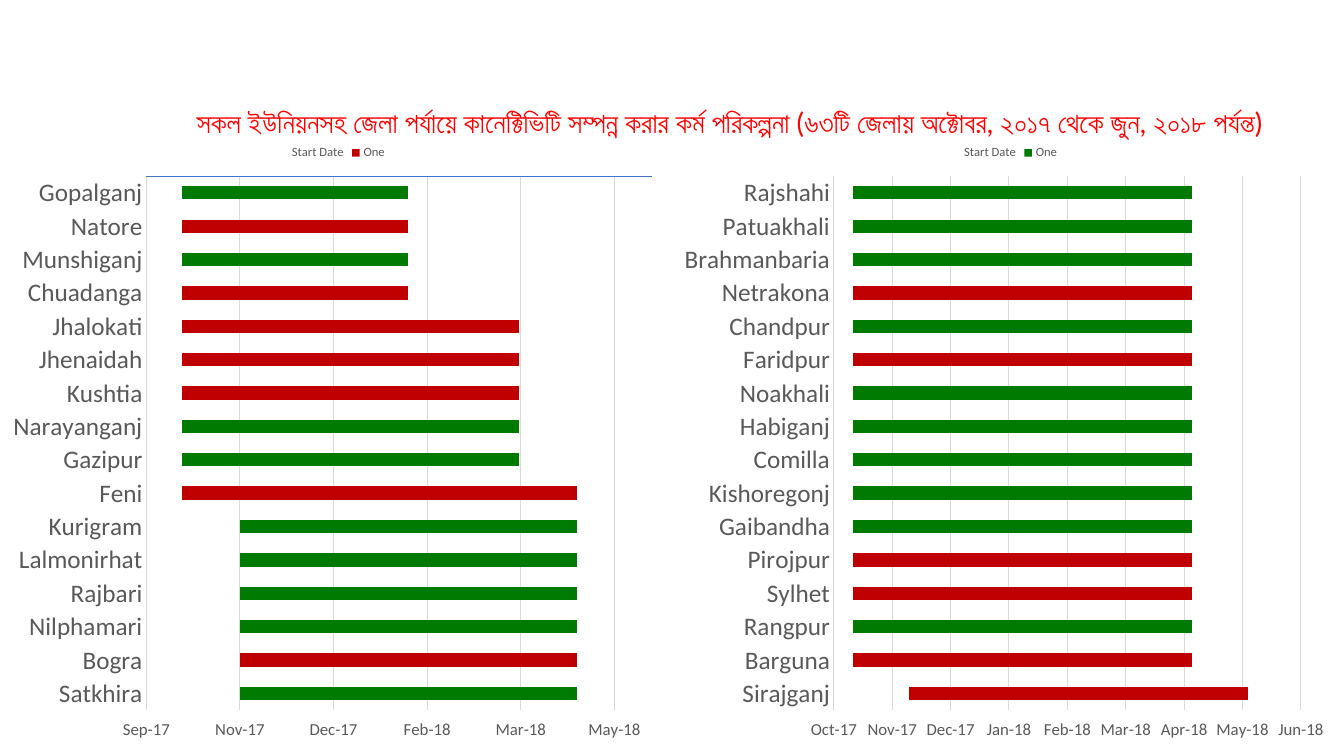
from lxml import etree
from pptx import Presentation
from pptx.chart.data import CategoryChartData
from pptx.dml.color import RGBColor
from pptx.enum.chart import XL_CHART_TYPE, XL_LEGEND_POSITION, XL_TICK_LABEL_POSITION, XL_TICK_MARK
from pptx.enum.text import MSO_ANCHOR, MSO_AUTO_SIZE, PP_ALIGN
from pptx.oxml.ns import qn
from pptx.util import Pt

RED = RGBColor(0xFF, 0x00, 0x00)
DARK_RED = RGBColor(0xC0, 0x00, 0x00)
GREEN = RGBColor(0x00, 0x7A, 0x00)
BLUE = RGBColor(0x44, 0x72, 0xC4)
GRAY = RGBColor(0x59, 0x59, 0x59)
LIGHT = RGBColor(0xD9, 0xD9, 0xD9)


def set_font(font, text_size, color, name="Calibri"):
    font.size, font.name, font.bold = Pt(text_size), name, False
    font.color.rgb = color


def set_line(line, color):
    line.width = Pt(0.75)
    line.color.rgb = color


prs = Presentation()
prs.slide_width, prs.slide_height = Pt(960), Pt(540)
s = prs.slides.add_slide(prs.slide_layouts[5])

# Title
sp = s.shapes.title
sp.left, sp.top, sp.width, sp.height = Pt(133.2), Pt(71.3), Pt(810.7), Pt(31.7)
tf = sp.text_frame
tf.auto_size, tf.vertical_anchor = MSO_AUTO_SIZE.NONE, MSO_ANCHOR.MIDDLE
p = tf.paragraphs[0]
p.alignment = PP_ALIGN.LEFT
r = p.add_run()
r.text = "সকল ইউনিয়নসহ জেলা পর্যায়ে কানেক্টিভিটি সম্পন্ন করার কর্ম পরিকল্পনা (৬৩টি জেলায় অক্টোবর, ২০১৭ থেকে জুন, ২০১৮ পর্যন্ত)"
set_font(r.font, 20, RED, "Lato")

# District plans: (district, start day, days, team that carries the bar)
left_plan = [
    ("Gopalganj", 43009, 121, "Two"), ("Natore", 43009, 121, "One"),
    ("Munshiganj", 43009, 121, "Two"), ("Chuadanga", 43009, 121, "One"),
    ("Jhalokati", 43009, 180, "One"), ("Jhenaidah", 43009, 180, "One"),
    ("Kushtia", 43009, 180, "One"), ("Narayanganj", 43009, 180, "Two"),
    ("Gazipur", 43009, 180, "Two"), ("Feni", 43009, 211, "One"),
    ("Kurigram", 43040, 180, "Two"), ("Lalmonirhat", 43040, 180, "Two"),
    ("Rajbari", 43040, 180, "Two"), ("Nilphamari", 43040, 180, "Two"),
    ("Bogra", 43040, 180, "One"), ("Satkhira", 43040, 180, "Two"),
]
right_plan = [
    ("Rajshahi", 43040, 180, "One"), ("Patuakhali", 43040, 180, "One"),
    ("Brahmanbaria", 43040, 180, "One"), ("Netrakona", 43040, 180, "Two"),
    ("Chandpur", 43040, 180, "One"), ("Faridpur", 43040, 180, "Two"),
    ("Noakhali", 43040, 180, "One"), ("Habiganj", 43040, 180, "One"),
    ("Comilla", 43040, 180, "One"), ("Kishoregonj", 43040, 180, "One"),
    ("Gaibandha", 43040, 180, "One"), ("Pirojpur", 43040, 180, "Two"),
    ("Sylhet", 43040, 180, "Two"), ("Rangpur", 43040, 180, "One"),
    ("Barguna", 43040, 180, "Two"), ("Sirajganj", 43070, 180, "Two"),
]

# Charts: left edge, plan, team colours, axis (min, max, step), axis line, plot x and width in percent
charts = [
    (0, left_plan, (DARK_RED, GREEN), (42990, 43260, 50), BLUE, 22, 76),
    (480.2, right_plan, (GREEN, DARK_RED), (43030, 43278, 31), None, 24.3, 70.2),
]
for left, plan, colors, (low, high, step), axis_color, plot_x, plot_w in charts:
    data = CategoryChartData()
    data.categories = [district for district, *_ in plan]
    data.add_series("Start Date", [start for _, start, *_ in plan])
    for team in ("One", "Two"):
        data.add_series(team, [days if owner == team else 0 for *_, days, owner in plan])
    chart = s.shapes.add_chart(XL_CHART_TYPE.BAR_STACKED, Pt(left), Pt(95.8),
                               Pt(475.2), Pt(442), data).chart
    chart.has_title = False
    chart.font.size, chart.font.name = Pt(10), "Calibri"

    # Bars: the start date is an invisible offset
    plot = chart.plots[0]
    plot.gap_width, plot.overlap, plot.vary_by_categories = 150, 100, False
    offset, *bars = plot.series
    offset.format.fill.background()
    for bar, color in zip(bars, colors):
        bar.format.fill.solid()
        bar.format.fill.fore_color.rgb = color

    # Axes
    districts, dates = chart.category_axis, chart.value_axis
    districts.reverse_order = True
    for axis, text_size in ((districts, 18), (dates, 12)):
        axis.major_tick_mark = axis.minor_tick_mark = XL_TICK_MARK.NONE
        set_font(axis.tick_labels.font, text_size, GRAY)
    set_line(districts.format.line, LIGHT)
    dates.minimum_scale, dates.maximum_scale, dates.major_unit = low, high, step
    dates.tick_label_position = XL_TICK_LABEL_POSITION.HIGH
    dates.tick_labels.number_format = "[$-409]mmm-yy;@"
    dates.tick_labels.number_format_is_linked = False
    set_line(dates.major_gridlines.format.line, LIGHT)
    if axis_color is None:
        dates.format.line.fill.background()
    else:
        set_line(dates.format.line, axis_color)

    # Legend with one entry hidden
    chart.has_legend = True
    legend = chart.legend
    legend.position, legend.include_in_layout = XL_LEGEND_POSITION.TOP, False
    set_font(legend.font, 9, GRAY)
    entry = etree.Element(qn("c:legendEntry"))
    etree.SubElement(entry, qn("c:idx")).set("val", "0")
    etree.SubElement(entry, qn("c:delete")).set("val", "1")
    legend._element.insert(1, entry)

    # Plot area position, in percent of the chart
    plot_area = chart._chartSpace.chart.plotArea
    for old in plot_area.findall(qn("c:layout")):
        plot_area.remove(old)
    layout = etree.Element(qn("c:layout"))
    manual = etree.SubElement(layout, qn("c:manualLayout"))
    for tag, value in (("layoutTarget", "inner"), ("xMode", "edge"), ("yMode", "edge")):
        etree.SubElement(manual, qn(f"c:{tag}")).set("val", value)
    for tag, percent in (("x", plot_x), ("y", 6.8), ("w", plot_w), ("h", 86.3)):
        etree.SubElement(manual, qn(f"c:{tag}")).set("val", str(percent / 100))
    plot_area.insert(0, layout)

prs.save("out.pptx")
